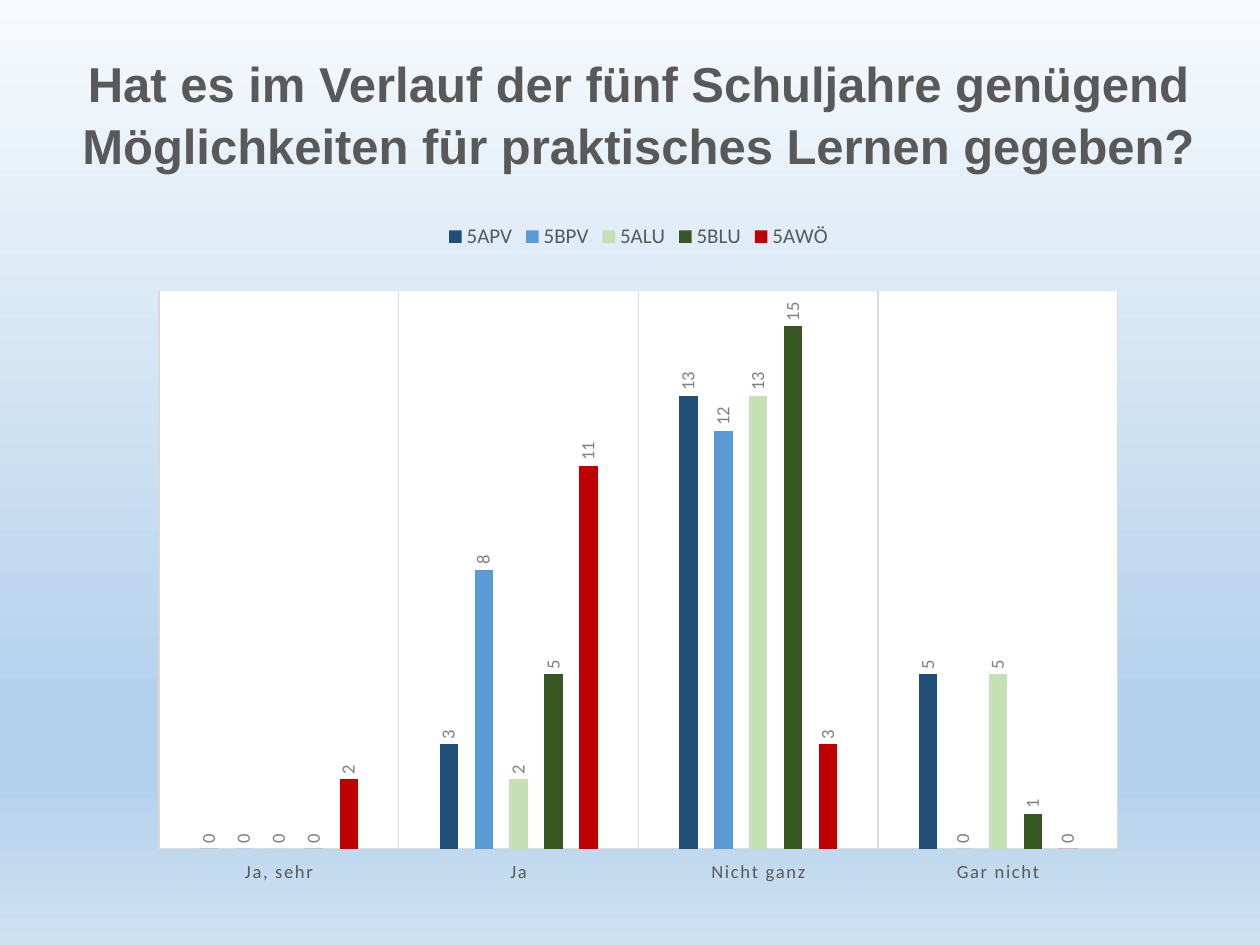
from lxml import etree
from pptx import Presentation
from pptx.chart.data import CategoryChartData
from pptx.dml.color import RGBColor
from pptx.enum.chart import (XL_CHART_TYPE, XL_LABEL_POSITION, XL_LEGEND_POSITION,
                             XL_TICK_LABEL_POSITION, XL_TICK_MARK)
from pptx.enum.text import MSO_ANCHOR, PP_ALIGN
from pptx.oxml import parse_xml
from pptx.oxml.ns import nsdecls, qn
from pptx.util import Pt

COLUMNS = XL_CHART_TYPE.COLUMN_CLUSTERED
OUTSIDE_END = XL_LABEL_POSITION.OUTSIDE_END
LEGEND_TOP = XL_LEGEND_POSITION.TOP
LABELS_LOW = XL_TICK_LABEL_POSITION.LOW
NO_TICK = XL_TICK_MARK.NONE
MIDDLE = MSO_ANCHOR.MIDDLE
CENTER = PP_ALIGN.CENTER

EMU_PER_PX = 914400 / 126
TITLE_ONLY = 5
COLORS = {"text": "595959", "label": "808080", "line": "D9D9D9", "plot": "FFFFFF"}
BACKGROUND_STOPS = [(0, "F7FAFD"), (74, "B5D2EC"), (83, "B5D2EC"), (100, "CEE1F2")]

TITLE = "Hat es im Verlauf der fünf Schuljahre genügend Möglichkeiten für praktisches Lernen gegeben?"
CATEGORIES = ["Ja, sehr", "Ja", "Nicht ganz", "Gar nicht"]
CLASSES = [
    ("5APV", "1F4E79", (0, 3, 13, 5)),
    ("5BPV", "5B9BD5", (0, 8, 12, 0)),
    ("5ALU", "C5E0B4", (0, 2, 13, 5)),
    ("5BLU", "385723", (0, 5, 15, 1)),
    ("5AWÖ", "C00000", (2, 11, 3, 0)),
]
PLOT_LAYOUT = {"x": 0.023, "y": 0.117, "w": 0.954, "h": 0.801}


def px(length):
    return round(length * EMU_PER_PX)


def set_values(target, **values):
    for name, value in values.items():
        setattr(target, name, value)


def format_font(font, size, color, name="Calibri", bold=False):
    set_values(font, size=Pt(size), name=name, bold=bold)
    font.color.rgb = RGBColor.from_string(color)


def format_line(line):
    line.color.rgb = RGBColor.from_string(COLORS["line"])
    line.width = Pt(0.75)


def paint_background(slide):
    fill = slide.background.fill
    fill.gradient()
    fill.gradient_angle = 270
    stops = slide.element.find(".//" + qn("a:gsLst"))
    for stop in list(stops):
        stops.remove(stop)
    for percent, color in BACKGROUND_STOPS:
        stop = etree.SubElement(stops, qn("a:gs"), pos=str(percent * 1000))
        etree.SubElement(stop, qn("a:srgbClr"), val=color)


def place_title(slide, left, top, width, height):
    title = slide.shapes.title
    set_values(title, left=px(left), top=px(top), width=px(width), height=px(height))
    set_values(title.text_frame, text=TITLE, word_wrap=True, vertical_anchor=MIDDLE)
    paragraph = title.text_frame.paragraphs[0]
    set_values(paragraph, alignment=CENTER, line_spacing=1.05)
    format_font(paragraph.runs[0].font, 28, COLORS["text"], "Arial", True)


def format_plot_area(chart):
    plot_area = chart.element.find(".//" + qn("c:plotArea"))
    for layout in plot_area.findall(qn("c:layout")):
        plot_area.remove(layout)
    settings = {"layoutTarget": "inner", "xMode": "edge", "yMode": "edge", **PLOT_LAYOUT}
    layout = etree.Element(qn("c:layout"))
    manual = etree.SubElement(layout, qn("c:manualLayout"))
    for name, value in settings.items():
        etree.SubElement(manual, qn("c:" + name), val=str(value))
    plot_area.insert(0, layout)
    plot_area.append(parse_xml(
        f'<c:spPr {nsdecls("c", "a")}><a:solidFill><a:srgbClr val="{COLORS["plot"]}"/>'
        '</a:solidFill><a:ln><a:noFill/></a:ln></c:spPr>'))


def format_axes(chart):
    axis = chart.category_axis
    set_values(axis, major_tick_mark=NO_TICK, minor_tick_mark=NO_TICK,
               tick_label_position=LABELS_LOW, has_major_gridlines=True)
    format_line(axis.format.line)
    format_line(axis.major_gridlines.format.line)
    format_font(axis.tick_labels.font, 10.6, COLORS["text"])
    # Wider letter spacing in the category names
    axis._element.find(".//" + qn("a:defRPr")).set("spc", "100")
    set_values(chart.value_axis, visible=False, has_major_gridlines=False,
               minimum_scale=0, maximum_scale=16)


def format_series(series, color):
    series.format.fill.solid()
    series.format.fill.fore_color.rgb = RGBColor.from_string(color)
    series.invert_if_negative = False
    labels = series.data_labels
    set_values(labels, show_value=True, position=OUTSIDE_END)
    format_font(labels.font, 10.6, COLORS["label"])
    # Values read upwards
    body = labels._element.find(".//" + qn("a:bodyPr"))
    body.set("rot", "-5400000")
    body.set("vert", "horz")


def add_answer_chart(slide, left, top, width, height):
    data = CategoryChartData()
    data.categories = CATEGORIES
    for name, _, values in CLASSES:
        data.add_series(name, values)
    chart = slide.shapes.add_chart(
        COLUMNS, px(left), px(top), px(width), px(height), data).chart
    format_font(chart.font, 10, "000000")
    set_values(chart, has_title=False, has_legend=True)
    set_values(chart.legend, position=LEGEND_TOP, include_in_layout=False)
    format_font(chart.legend.font, 12, COLORS["text"])
    plot = chart.plots[0]
    set_values(plot, gap_width=444, overlap=-90, vary_by_categories=False)
    for series, (_, color, _) in zip(plot.series, CLASSES):
        format_series(series, color)
    format_axes(chart)
    format_plot_area(chart)


def main():
    presentation = Presentation()
    set_values(presentation, slide_width=px(1260), slide_height=px(945))
    slide = presentation.slides.add_slide(presentation.slide_layouts[TITLE_ONLY])
    paint_background(slide)
    add_answer_chart(slide, 136, 210, 1005, 696)
    place_title(slide, 53, 47, 1171, 131)
    presentation.save("out.pptx")


if __name__ == "__main__":
    main()
